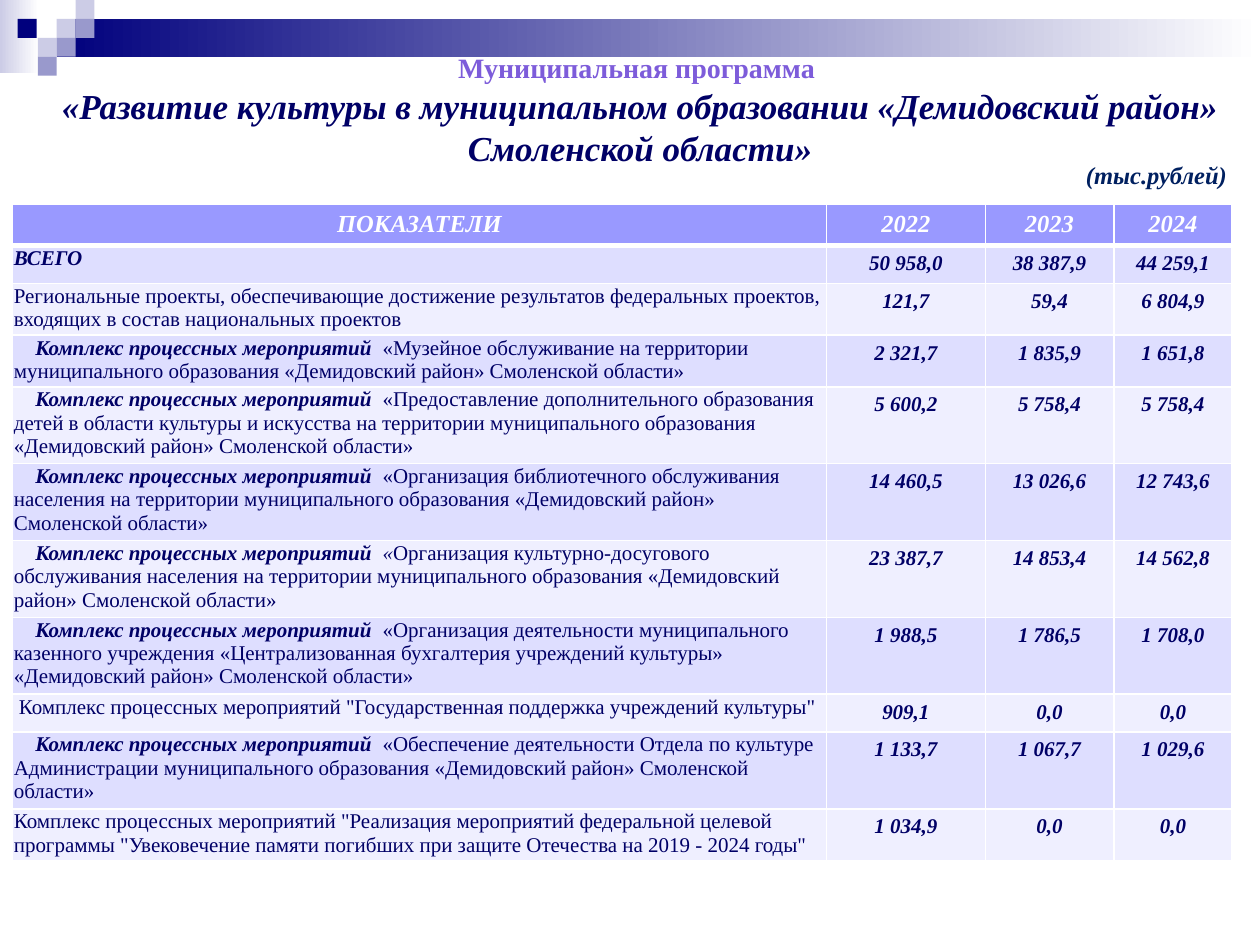
from dataclasses import dataclass

from lxml.etree import SubElement
from pptx import Presentation
from pptx.dml.color import RGBColor
from pptx.enum.shapes import MSO_SHAPE
from pptx.enum.text import MSO_ANCHOR, PP_ALIGN
from pptx.oxml.ns import qn
from pptx.util import Inches, Pt


@dataclass(frozen=True)
class Theme:
    font: str = "Times New Roman"
    navy: str = "00007D"
    lilac: str = "CCCCE6"
    violet: str = "9999CC"
    white: str = "FFFFFF"
    text: str = "000066"
    caption: str = "7D5CDA"
    unit: str = "002060"
    header: str = "9999FF"
    bands: tuple = ("DEDEFF", "EFEFFF")
    caption_size: int = 16
    title_size: int = 20
    header_size: int = 14
    body_size: int = 12


T = Theme()


def add_run(p, text, size, color, style="bi"):
    """Style holds b for bold and i for italic."""
    r = p.add_run()
    r.text = text
    r.font.name = T.font
    r.font.size = Pt(size)
    r.font.bold = "b" in style
    r.font.italic = "i" in style
    r.font.color.rgb = RGBColor.from_string(color)


def format_cell(cell, fill, bottom_width):
    """Set the cell's fill and its four white borders."""
    tcPr = cell._tc.get_or_add_tcPr()
    for side, width in (("L", 1), ("R", 1), ("T", 1), ("B", bottom_width)):
        ln = SubElement(tcPr, qn(f"a:ln{side}"), w=str(Pt(width)))
        SubElement(SubElement(ln, qn("a:solidFill")), qn("a:srgbClr"), val=T.white)
    cell.fill.solid()
    cell.fill.fore_color.rgb = RGBColor.from_string(fill)


prs = Presentation()
prs.slide_width, prs.slide_height = Inches(10), Inches(7.5)
s = prs.slides.add_slide(prs.slide_layouts[5])

# Banner: two gradient bars and a mosaic of squares
SQUARE = 0.15
banner = [
    (0, 0, 0.31, 0.58, (T.lilac, T.white)),
    (0.45, 0.15, 9.55, 0.3, (T.navy, T.white)),
]
mosaic = [
    (0.45, 0.15, T.lilac), (0.6, 0, T.lilac), (0.6, 0.15, T.violet),
    (0.3, 0.3, T.lilac), (0.14, 0.15, T.navy), (0.45, 0.3, T.violet),
    (0.3, 0.45, T.violet),
]
banner += [(x, y, SQUARE, SQUARE, (color,)) for x, y, color in mosaic]
for x, y, w, h, colors in banner:
    sp = s.shapes.add_shape(MSO_SHAPE.RECTANGLE, Inches(x), Inches(y), Inches(w), Inches(h))
    sp.shadow.inherit = False
    sp.line.fill.background()
    if len(colors) == 1:
        sp.fill.solid()
        sp.fill.fore_color.rgb = RGBColor.from_string(colors[0])
    else:
        sp.fill.gradient()
        sp.fill.gradient_angle = 0
        for stop, color in zip(sp.fill.gradient_stops, colors):
            stop.color.rgb = RGBColor.from_string(color)

# Title
title = s.shapes.title
title.left, title.top, title.width, title.height = (Inches(v) for v in (0.39, 0.35, 9.38, 1.04))
tf = title.text_frame
tf.word_wrap = True
tf.vertical_anchor = MSO_ANCHOR.TOP
tf.margin_left = tf.margin_right = Inches(0.05)
p = tf.paragraphs[0]
p.alignment = PP_ALIGN.CENTER
add_run(p, "Муниципальная программа ", T.caption_size, T.caption, "b")
p = tf.add_paragraph()
p.alignment = PP_ALIGN.CENTER
add_run(p, "«Развитие культуры в муниципальном образовании «Демидовский район» Смоленской области»",
        T.title_size, T.text)

# Table: first-line indent, runs of the name, values by year
LEAD = ("Комплекс процессных мероприятий  ", "bi")
INDENT = 0.17
header = ["ПОКАЗАТЕЛИ", "2022", "2023", "2024"]
rows = [
    (0, [("ВСЕГО", "bi")], ["50 958,0", "38 387,9", "44 259,1"]),
    (0, [("Региональные проекты, обеспечивающие достижение результатов федеральных проектов, "
          "входящих в состав национальных проектов", "")], ["121,7", "59,4", "6 804,9"]),
    (INDENT, [LEAD, ("«Музейное обслуживание на территории муниципального образования "
                     "«Демидовский район» Смоленской области»", "")],
     ["2 321,7", "1 835,9", "1 651,8"]),
    (INDENT, [LEAD, ("«Предоставление дополнительного образования детей в области культуры и "
                     "искусства на территории муниципального образования «Демидовский район» "
                     "Смоленской области»", "")],
     ["5 600,2", "5 758,4", "5 758,4"]),
    (INDENT, [LEAD, ("«Организация библиотечного обслуживания населения на территории "
                     "муниципального образования «Демидовский район» Смоленской области»", "")],
     ["14 460,5", "13 026,6", "12 743,6"]),
    (INDENT, [LEAD, ("«", "i"),
              ("Организация культурно-досугового обслуживания населения на территории "
               "муниципального образования «Демидовский район» Смоленской области»", "")],
     ["23 387,7", "14 853,4", "14 562,8"]),
    (INDENT, [LEAD, ("«Организация деятельности муниципального казенного учреждения "
                     "«Централизованная бухгалтерия учреждений культуры» «Демидовский район» "
                     "Смоленской области»", "")],
     ["1 988,5", "1 786,5", "1 708,0"]),
    (0.04, [('Комплекс процессных мероприятий "Государственная поддержка учреждений культуры"', "")],
     ["909,1", "0,0", "0,0"]),
    (INDENT, [LEAD, ("«Обеспечение деятельности Отдела по культуре Администрации муниципального "
                     "образования «Демидовский район» Смоленской области»", "")],
     ["1 133,7", "1 067,7", "1 029,6"]),
    (0, [('Комплекс процессных мероприятий "Реализация мероприятий федеральной целевой программы '
          '"Увековечение памяти погибших при защите Отечества на 2019 - 2024 годы"', "")],
     ["1 034,9", "0,0", "0,0"]),
]
col_widths = [6.46, 1.26, 1.02, 0.94]
line_heights = {1: 0.3, 2: 0.41, 3: 0.61}
row_heights = [0.33] + [line_heights[n] for n in (1, 2, 2, 3, 3, 3, 3, 1, 3, 2)]

table = s.shapes.add_table(len(row_heights), len(col_widths), Inches(0.1), Inches(1.62),
                           Inches(sum(col_widths)), Inches(sum(row_heights))).table
for column, width in zip(table.columns, col_widths):
    column.width = Inches(width)
for row, height in zip(table.rows, row_heights):
    row.height = Inches(height)

for cell, label in zip(table.rows[0].cells, header):
    format_cell(cell, T.header, 3)
    p = cell.text_frame.paragraphs[0]
    p.alignment = PP_ALIGN.CENTER
    add_run(p, label, T.header_size, T.white)

for i, (indent, runs, values) in enumerate(rows):
    name, *numbers = table.rows[i + 1].cells
    for cell in (name, *numbers):
        format_cell(cell, T.bands[i % 2], 1)
    name.margin_left = name.margin_top = name.margin_right = Inches(0.01)
    name.margin_bottom = 0
    p = name.text_frame.paragraphs[0]
    p._p.get_or_add_pPr().set("indent", str(Inches(indent)))
    for text, style in runs:
        add_run(p, text, T.body_size, T.text, style)
    for cell, value in zip(numbers, values):
        p = cell.text_frame.paragraphs[0]
        p.alignment = PP_ALIGN.CENTER
        add_run(p, value, T.body_size, T.text)

# Unit of measure
tf = s.shapes.add_textbox(Inches(8.52), Inches(1.22), Inches(1.33), Inches(0.34)).text_frame
tf.word_wrap = False
add_run(tf.paragraphs[0], "(тыс.рублей)", T.header_size, T.unit)

prs.save("out.pptx")
